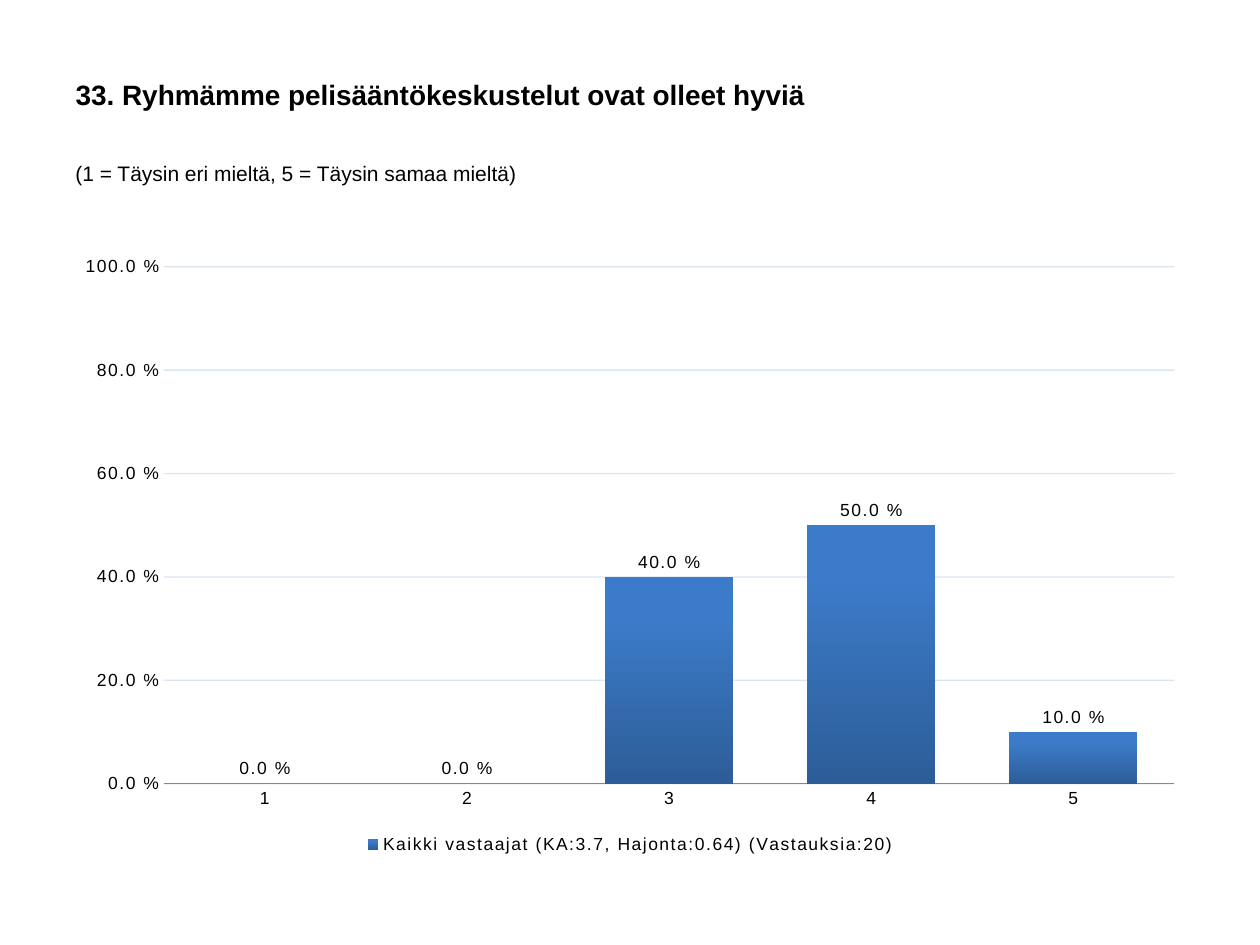
import lxml.etree
import pptx
import pptx.chart.data
import pptx.dml.color
import pptx.enum.chart
import pptx.enum.text
import pptx.oxml.ns
import pptx.util
from pptx.util import Cm

BLACK = pptx.dml.color.RGBColor(0x00, 0x00, 0x00)
AXIS_GREY = pptx.dml.color.RGBColor(0x87, 0x87, 0x87)
GRID_BLUE = pptx.dml.color.RGBColor(0x4F, 0x81, 0xBD)
BAR_DARK = pptx.dml.color.RGBColor(0x2C, 0x5D, 0x98)
BAR_LIGHT = pptx.dml.color.RGBColor(0x3C, 0x7B, 0xC9)


class SurveySlide:
    """A survey question slide with its title, scale note and answer chart."""

    font_name = "Arial"
    percent_format = "0.0\\ %"
    left = Cm(1.27)
    width = Cm(22.86)

    def __init__(self, presentation):
        self.slide = presentation.slides.add_slide(presentation.slide_layouts[5])

    def style_font(self, font, size, bold=False):
        font.name = self.font_name
        font.size = pptx.util.Pt(size)
        font.bold = bold
        font.color.rgb = BLACK

    def fill_text(self, shape, text, size, bold=False):
        shape.text_frame.text = text
        shape.text_frame.word_wrap = True
        paragraph = shape.text_frame.paragraphs[0]
        paragraph.alignment = pptx.enum.text.PP_ALIGN.LEFT
        self.style_font(paragraph.font, size, bold)

    def add_title(self, text, top, height):
        title = self.slide.shapes.title
        title.left, title.top, title.width, title.height = self.left, top, self.width, height
        self.fill_text(title, text, 16, bold=True)
        title.text_frame.vertical_anchor = pptx.enum.text.MSO_ANCHOR.MIDDLE

    def add_note(self, text, top, height):
        note = self.slide.shapes.add_textbox(self.left, top, self.width, height)
        self.fill_text(note, text, 12)

    def add_column_chart(self, name, categories, values, top, height):
        data = pptx.chart.data.CategoryChartData(number_format=self.percent_format)
        data.categories = categories
        data.add_series(name, values)
        chart = self.slide.shapes.add_chart(
            pptx.enum.chart.XL_CHART_TYPE.COLUMN_CLUSTERED,
            self.left, top, self.width, height, data,
        ).chart
        self.style_font(chart.font, 10)
        chart.has_title = False
        chart.has_legend = True
        chart.legend.position = pptx.enum.chart.XL_LEGEND_POSITION.BOTTOM
        chart.legend.include_in_layout = False
        self.style_font(chart.legend.font, 10)
        self.style_axes(chart)
        self.style_bars(chart.plots[0])
        for properties in chart.element.xpath(".//a:defRPr"):
            properties.set("spc", "100")

    def style_axes(self, chart):
        for axis in (chart.category_axis, chart.value_axis):
            axis.major_tick_mark = pptx.enum.chart.XL_TICK_MARK.NONE
            axis.minor_tick_mark = pptx.enum.chart.XL_TICK_MARK.NONE
            self.style_font(axis.tick_labels.font, 10)
        chart.category_axis.format.line.color.rgb = AXIS_GREY
        value_axis = chart.value_axis
        value_axis.minimum_scale, value_axis.maximum_scale = 0, 1
        value_axis.major_unit = 0.2
        value_axis.tick_labels.number_format = self.percent_format
        value_axis.tick_labels.number_format_is_linked = False
        value_axis.format.line.fill.background()
        value_axis.has_major_gridlines = True
        gridlines = value_axis.major_gridlines.format.line
        gridlines.width = pptx.util.Pt(0.75)
        gridlines.color.rgb = GRID_BLUE
        for color in chart.element.xpath(".//c:majorGridlines//a:srgbClr"):
            lxml.etree.SubElement(color, pptx.oxml.ns.qn("a:alpha"), val="20000")

    def style_bars(self, plot):
        plot.gap_width = 58
        plot.vary_by_categories = False
        fill = plot.series[0].format.fill
        fill.gradient()
        fill.gradient_angle = 90
        for stop, position, color in zip(fill.gradient_stops, (0, 0.8), (BAR_DARK, BAR_LIGHT)):
            stop.position = position
            stop.color.rgb = color
        plot.has_data_labels = True
        labels = plot.data_labels
        labels.show_value = True
        labels.number_format = self.percent_format
        labels.number_format_is_linked = False
        labels.position = pptx.enum.chart.XL_LABEL_POSITION.OUTSIDE_END
        self.style_font(labels.font, 10)


def main():
    presentation = pptx.Presentation()
    presentation.slide_width, presentation.slide_height = Cm(25.4), Cm(19.05)
    survey = SurveySlide(presentation)
    survey.add_title("33. Ryhmämme pelisääntökeskustelut ovat olleet hyviä", Cm(0.91), Cm(2))
    survey.add_note("(1 = Täysin eri mieltä, 5 = Täysin samaa mieltä)", Cm(3.12), Cm(1.5))
    survey.add_column_chart(
        "Kaikki vastaajat (KA:3.7, Hajonta:0.64) (Vastauksia:20)",
        ["1", "2", "3", "4", "5"],
        [0, 0, 0.4, 0.5, 0.1],
        Cm(4.93), Cm(12.4),
    )
    presentation.save("out.pptx")


if __name__ == "__main__":
    main()
